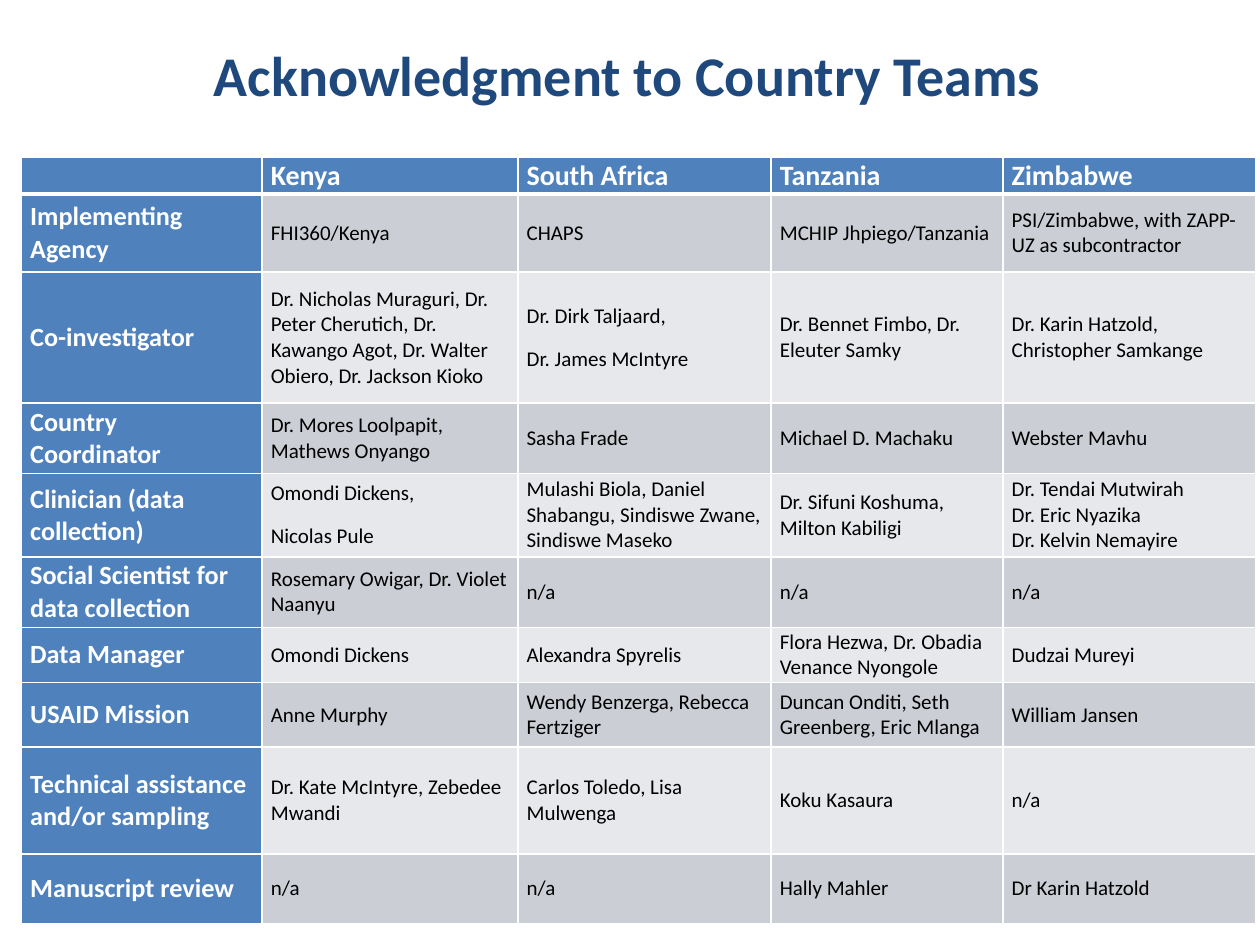
from dataclasses import dataclass

from lxml import etree
from pptx import Presentation
from pptx.dml.color import RGBColor
from pptx.enum.text import MSO_ANCHOR, PP_ALIGN
from pptx.oxml.ns import qn
from pptx.util import Inches, Pt

MIDDLE = MSO_ANCHOR.MIDDLE
CENTER = PP_ALIGN.CENTER

NAVY = RGBColor(0x1F, 0x49, 0x7D)
BLUE = RGBColor(0x4F, 0x81, 0xBD)
GREY = RGBColor(0xCC, 0xCE, 0xD5)
PALE = RGBColor(0xE7, 0xE8, 0xEB)
WHITE = RGBColor(0xFF, 0xFF, 0xFF)
BLACK = RGBColor(0x00, 0x00, 0x00)

FONT = "Calibri"
SLIDE_W, SLIDE_H = Inches(10), Inches(7.5)

# Table grid, in hundredths of an inch
GRID_UNIT = Inches(0.01)
GRID_LEFT, GRID_TOP = 17, 125
COLUMNS = (191, 203, 201, 184, 201)
HEADER_ROW = 29


@dataclass(frozen=True)
class CellStyle:
    size: int
    color: RGBColor
    bold: bool


@dataclass(frozen=True)
class Role:
    name: str
    height: int
    teams: tuple[str, ...]  # one entry per country, newline = new paragraph
    tight: tuple[int, ...] = ()  # countries listed without paragraph gaps


HEADER = CellStyle(16, WHITE, True)
ROLE_NAME = CellStyle(15, WHITE, True)
TEAM = CellStyle(12, BLACK, False)

COUNTRIES = ("", "Kenya", "South Africa", "Tanzania", "Zimbabwe")
ROLES = (
    Role("Implementing Agency", 62, (
        "FHI360/Kenya", "CHAPS", "MCHIP Jhpiego/Tanzania",
        "PSI/Zimbabwe, with ZAPP-UZ as subcontractor")),
    Role("Co-investigator", 104, (
        "Dr. Nicholas Muraguri, Dr. Peter Cherutich, Dr. Kawango Agot, "
        "Dr. Walter Obiero, Dr. Jackson Kioko",
        "Dr. Dirk Taljaard,\nDr. James McIntyre",
        "Dr. Bennet Fimbo, Dr. Eleuter Samky",
        "Dr. Karin Hatzold, Christopher Samkange")),
    Role("Country Coordinator", 56, (
        "Dr. Mores Loolpapit, Mathews Onyango", "Sasha Frade",
        "Michael D. Machaku", "Webster Mavhu")),
    Role("Clinician (data collection)", 66, (
        "Omondi Dickens,\nNicolas Pule",
        "Mulashi Biola, Daniel Shabangu, Sindiswe Zwane, Sindiswe Maseko",
        "Dr. Sifuni Koshuma, Milton Kabiligi",
        "Dr. Tendai Mutwirah\nDr. Eric Nyazika\nDr. Kelvin Nemayire"),
        tight=(3,)),
    Role("Social Scientist for data collection", 56, (
        "Rosemary Owigar, Dr. Violet Naanyu", "n/a", "n/a", "n/a")),
    Role("Data Manager", 44, (
        "Omondi Dickens", "Alexandra Spyrelis",
        "Flora Hezwa, Dr. Obadia Venance Nyongole", "Dudzai Mureyi")),
    Role("USAID Mission", 51, (
        "Anne Murphy", "Wendy Benzerga, Rebecca Fertziger",
        "Duncan Onditi, Seth Greenberg, Eric Mlanga", "William Jansen")),
    Role("Technical assistance and/or sampling", 85, (
        "Dr. Kate McIntyre, Zebedee Mwandi", "Carlos Toledo, Lisa Mulwenga",
        "Koku Kasaura", "n/a")),
    Role("Manuscript review", 55, (
        "n/a", "n/a", "Hally Mahler", "Dr Karin Hatzold")),
)


def format_runs(paragraph, style: CellStyle) -> None:
    for run in paragraph.runs:
        run.font.name = FONT
        run.font.size = Pt(style.size)
        run.font.bold = style.bold
        run.font.color.rgb = style.color


def add_borders(cell, top: int, bottom: int) -> None:
    """White cell borders; widths in points."""
    properties = cell._tc.get_or_add_tcPr()
    for side, width in (("L", 1), ("R", 1), ("T", top), ("B", bottom)):
        line = etree.SubElement(properties, qn(f"a:ln{side}"), w=str(Pt(width)))
        fill = etree.SubElement(line, qn("a:solidFill"))
        etree.SubElement(fill, qn("a:srgbClr"), val=str(WHITE))


def fill_cell(cell, text: str, style: CellStyle, fill: RGBColor,
              top: int = 1, bottom: int = 1, gap: int = 10) -> None:
    add_borders(cell, top, bottom)
    cell.fill.solid()
    cell.fill.fore_color.rgb = fill
    cell.vertical_anchor = MIDDLE
    cell.margin_left = cell.margin_right = Inches(0.07)
    cell.margin_top = cell.margin_bottom = 0
    cell.text_frame.text = text
    for paragraph in cell.text_frame.paragraphs:
        paragraph.space_after = Pt(gap)
        format_runs(paragraph, style)
        if not text:  # keeps the empty corner from stretching its row
            etree.SubElement(paragraph._p, qn("a:endParaRPr"),
                             sz=str(style.size * 100))


def add_title(slide, text: str) -> None:
    box = slide.shapes.add_textbox(
        Inches(0.17), Inches(0.25), Inches(9.62), Inches(0.67))
    frame = box.text_frame
    frame.word_wrap = True
    frame.vertical_anchor = MIDDLE
    frame.text = text
    heading = frame.paragraphs[0]
    heading.alignment = CENTER
    format_runs(heading, CellStyle(32, NAVY, True))


def add_team_table(slide) -> None:
    heights = (HEADER_ROW, *(role.height for role in ROLES))
    table = slide.shapes.add_table(
        len(heights), len(COLUMNS),
        GRID_LEFT * GRID_UNIT, GRID_TOP * GRID_UNIT,
        sum(COLUMNS) * GRID_UNIT, sum(heights) * GRID_UNIT).table
    for column, width in zip(table.columns, COLUMNS):
        column.width = width * GRID_UNIT
    for row, height in zip(table.rows, heights):
        row.height = height * GRID_UNIT

    # Country header, with a thick rule below it
    for c, country in enumerate(COUNTRIES):
        fill_cell(table.cell(0, c), country, HEADER, BLUE, bottom=3)

    # Role rows, in alternating bands
    for r, role in enumerate(ROLES, start=1):
        top = 3 if r == 1 else 1
        band = GREY if r % 2 else PALE
        fill_cell(table.cell(r, 0), role.name, ROLE_NAME, BLUE, top=top)
        for c, team in enumerate(role.teams):
            gap = 0 if c in role.tight else 10
            fill_cell(table.cell(r, c + 1), team, TEAM, band, top=top, gap=gap)


def main() -> None:
    deck = Presentation()
    deck.slide_width, deck.slide_height = SLIDE_W, SLIDE_H
    slide = deck.slides.add_slide(deck.slide_layouts[6])
    add_title(slide, "Acknowledgment to Country Teams")
    add_team_table(slide)
    deck.save("out.pptx")


if __name__ == "__main__":
    main()
